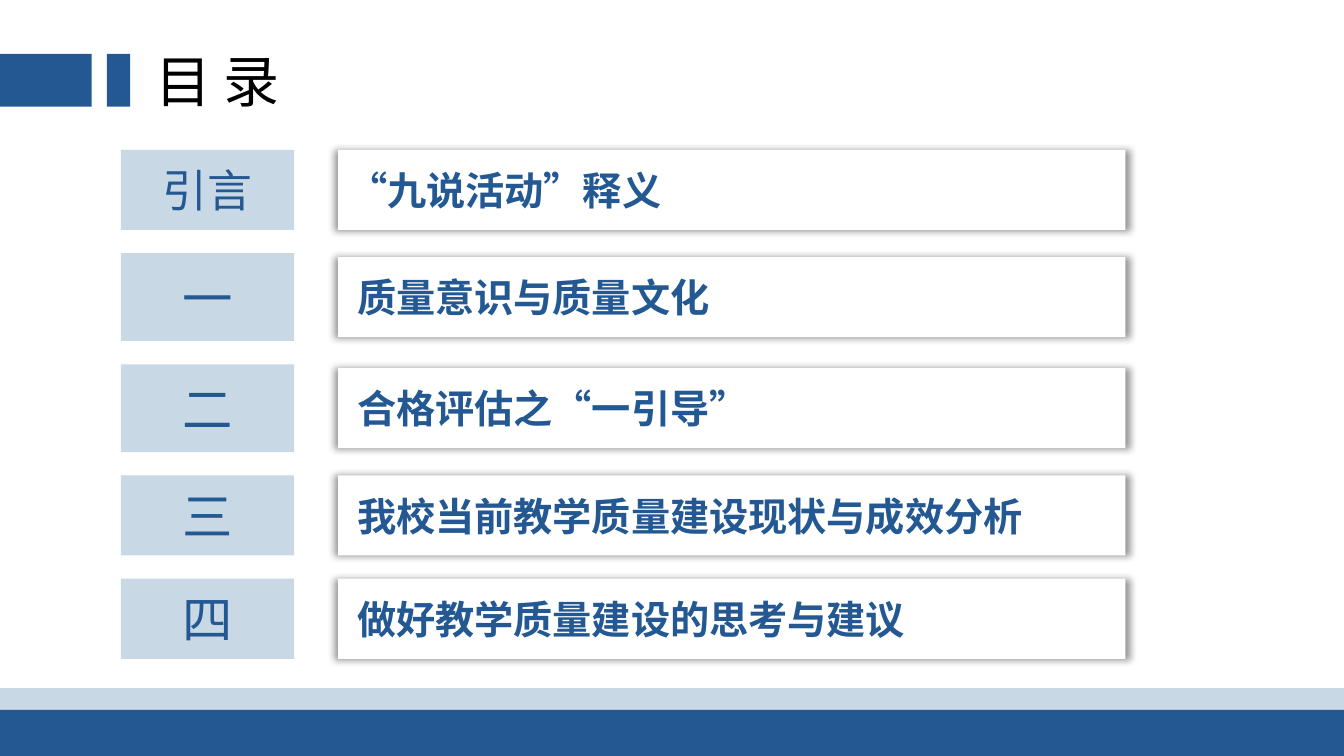
import pptx
import pptx.dml.color
import pptx.enum.shapes
import pptx.enum.text
import pptx.oxml
import pptx.oxml.ns
import pptx.util
from lxml import etree

Pt = pptx.util.Pt
RGBColor = pptx.dml.color.RGBColor
ALIGN = pptx.enum.text.PP_ALIGN
MIDDLE = pptx.enum.text.MSO_ANCHOR.MIDDLE

# Content: label, label size, label height, topic, topic inset
HEADING = "目 录"
CHAPTERS = [
    ("引言", 32, 57.2, "“九说活动”释义", 7.2),
    ("一", 36, 62.8, "质量意识与质量文化", 13.5),
    ("二", 36, 62.8, "合格评估之“一引导”", 13.5),
    ("三", 36, 57.2, "我校当前教学质量建设现状与成效分析", 13.5),
    ("四", 36, 57.2, "做好教学质量建设的思考与建议", 13.5),
]

# Style
FONT = "Noto Sans CJK SC"
NAVY = RGBColor(0x23, 0x58, 0x93)
PALE = RGBColor(0xC8, 0xD8, 0xE5)
WHITE = RGBColor(0xFF, 0xFF, 0xFF)
BLACK = RGBColor(0, 0, 0)

# Layout in points
SLIDE_W, SLIDE_H = 960, 540
FIRST_TOP, ROW_GAP = 107, 16.6
LABEL_LEFT, LABEL_W = 86.4, 123.8
CARD_LEFT, CARD_W, CARD_H = 241.6, 562.4, 57.2

# Bands: left, top, width, height, colour
BANDS = [
    (0, 491.5, SLIDE_W, 40, PALE),
    (0, 507, SLIDE_W, 33, NAVY),
    (0, 38.4, 65.4, 37.8, NAVY),
    (76.4, 38.4, 16.6, 37.8, NAVY),
]

SHADOW = (
    '<a:effectLst %s><a:outerShdw blurRad="63500" sx="101000" sy="101000" algn="ctr" '
    'rotWithShape="0"><a:srgbClr val="000000"><a:alpha val="40000"/></a:srgbClr>'
    "</a:outerShdw></a:effectLst>" % pptx.oxml.ns.nsdecls("a")
)


def add_box(left, top, width, height, colour):
    box = slide.shapes.add_shape(
        pptx.enum.shapes.MSO_SHAPE.RECTANGLE, Pt(left), Pt(top), Pt(width), Pt(height))
    box.shadow.inherit = False
    box.fill.solid()
    box.fill.fore_color.rgb = colour
    box.line.fill.background()
    return box


def write(shape, text, size, colour, align, bold=False):
    frame = shape.text_frame
    frame.text = text
    frame.vertical_anchor = MIDDLE
    paragraph = frame.paragraphs[0]
    paragraph.alignment = align
    font = paragraph.font
    font.size, font.bold, font.name = Pt(size), bold, FONT
    font.color.rgb = colour
    # East Asian typeface
    properties = paragraph._p.pPr.find(pptx.oxml.ns.qn("a:defRPr"))
    etree.SubElement(properties, pptx.oxml.ns.qn("a:ea"), typeface=FONT)


def add_soft_shadow(shape):
    properties = shape._element.spPr
    properties.remove(properties.find(pptx.oxml.ns.qn("a:effectLst")))
    properties.append(pptx.oxml.parse_xml(SHADOW))


deck = pptx.Presentation()
deck.slide_width, deck.slide_height = Pt(SLIDE_W), Pt(SLIDE_H)
slide = deck.slides.add_slide(deck.slide_layouts[5])

# Footer bands and heading marks
for band in BANDS:
    add_box(*band)

# Heading
heading = slide.shapes.title
heading.left, heading.top, heading.width, heading.height = Pt(103.7), Pt(29.5), Pt(114.5), Pt(55.7)
write(heading, HEADING, 40, BLACK, ALIGN.LEFT)
heading.text_frame.word_wrap = False
heading.text_frame.auto_size = pptx.enum.text.MSO_AUTO_SIZE.NONE

# Chapter rows: each card is centred on its label
top = FIRST_TOP
for label_text, label_size, label_h, topic, inset in CHAPTERS:
    card = add_box(CARD_LEFT, top + (label_h - CARD_H) / 2, CARD_W, CARD_H, WHITE)
    add_soft_shadow(card)
    write(card, topic, 28, NAVY, ALIGN.LEFT, bold=True)
    card.text_frame.margin_left = Pt(inset)
    label = add_box(LABEL_LEFT, top, LABEL_W, label_h, PALE)
    write(label, label_text, label_size, NAVY, ALIGN.CENTER)
    top += label_h + ROW_GAP

deck.save("out.pptx")
